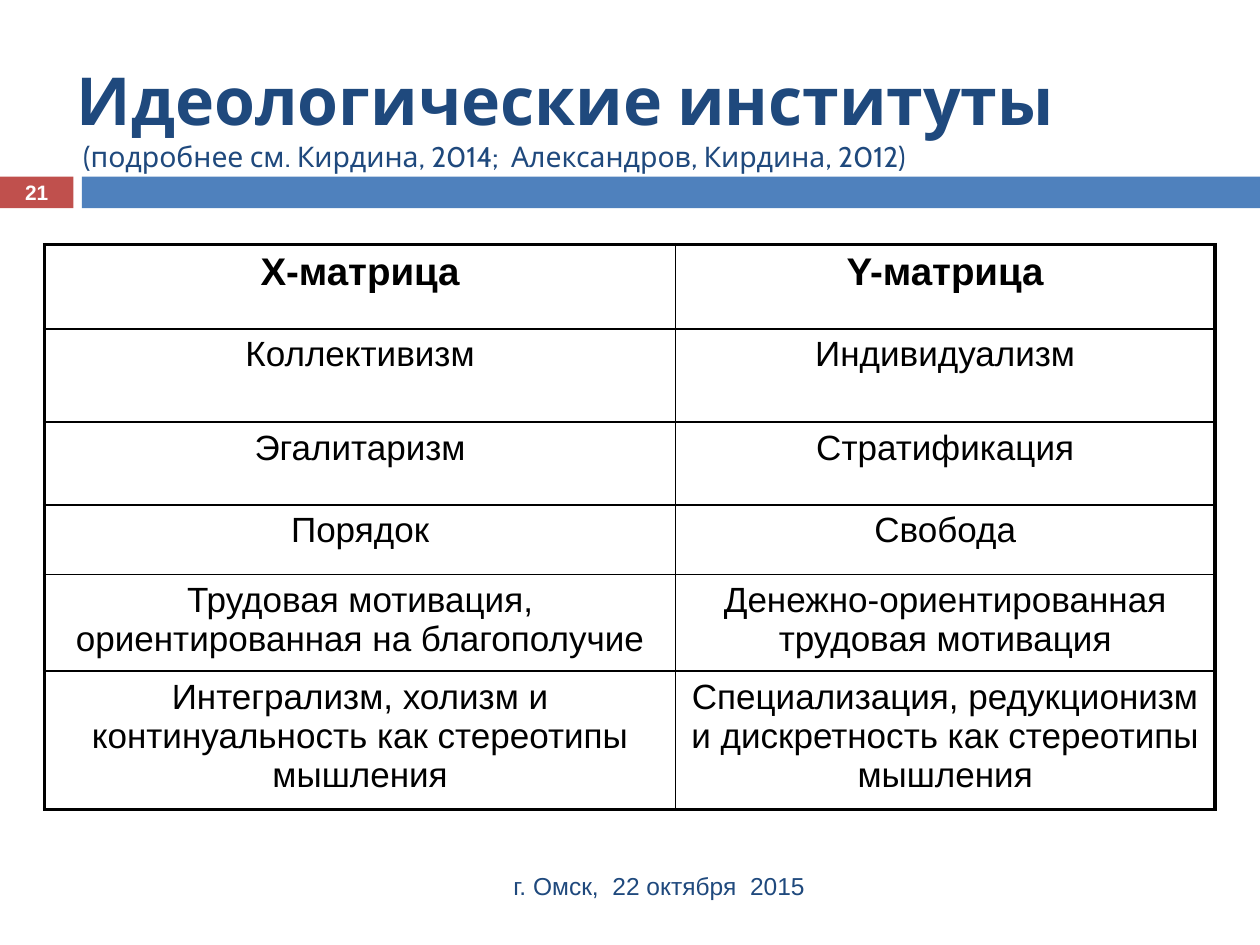
from dataclasses import dataclass

from pptx import Presentation
from pptx.dml.color import RGBColor
from pptx.enum import shapes, text
from pptx.oxml import ns, xmlchemy
from pptx.util import Cm, Pt


@dataclass(frozen=True)
class Theme:
    navy: RGBColor = RGBColor(0x1F, 0x49, 0x7D)
    blue: RGBColor = RGBColor(0x4F, 0x81, 0xBD)
    red: RGBColor = RGBColor(0xC0, 0x50, 0x4D)
    black: RGBColor = RGBColor(0, 0, 0)
    white: RGBColor = RGBColor(0xFF, 0xFF, 0xFF)
    heading_font: str = "Cabin"
    body_font: str = "Arial"
    title: float = 37.8
    subtitle: float = 16.2
    table_head: float = 22
    table_body: float = 20
    footer: float = 14
    number: float = 11.9
    outer_line: float = 2.25
    inner_line: float = 1


THEME = Theme()

MATRICES = [
    ("Х-матрица", "Y-матрица"),
    ("Коллективизм", "Индивидуализм"),
    ("Эгалитаризм", "Стратификация"),
    ("Порядок", "Свобода"),
    ("Трудовая мотивация, ориентированная на благополучие",
     "Денежно-ориентированная трудовая мотивация"),
    ("Интегрализм, холизм и континуальность как стереотипы мышления",
     "Специализация, редукционизм и дискретность как стереотипы мышления"),
]
COLUMN_WIDTHS = (12.72, 10.87)
ROW_HEIGHTS = (1.7, 1.88, 1.67, 1.4, 1.4, 1.4)


def set_font(font, size, color, bold=False, name=THEME.body_font):
    font.name, font.size, font.bold = name, Pt(size), bold
    font.color.rgb = color


def add_text_frame(slide, left, top, width, height):
    box = slide.shapes.add_textbox(Cm(left), Cm(top), Cm(width), Cm(height))
    frame = box.text_frame
    frame.word_wrap = True
    frame.vertical_anchor = text.MSO_ANCHOR.MIDDLE
    return frame


def add_title(slide, left, top, width, height):
    heading = add_text_frame(slide, left, top, width, height).paragraphs[0]
    name = heading.add_run()
    name.text = "Идеологические институты"
    set_font(name.font, THEME.title, THEME.navy, True, THEME.heading_font)
    heading.add_line_break()
    reference = heading.add_run()
    reference.text = " (подробнее см. Кирдина, 2014;  Александров, Кирдина, 2012)"
    set_font(reference.font, THEME.subtitle, THEME.navy, name=THEME.heading_font)


def add_band(slide, left, top, width, height, number_width=1.48, gap=0.17):
    # Red block for the slide number, blue bar for the rest of the width
    bar_left = number_width + gap
    for offset, part_width, color in ((0, number_width, THEME.red),
                                      (bar_left, width - bar_left, THEME.blue)):
        block = slide.shapes.add_shape(
            shapes.MSO_SHAPE.RECTANGLE,
            Cm(left + offset), Cm(top), Cm(part_width), Cm(height))
        block.shadow.inherit = False
        block.fill.solid()
        block.fill.fore_color.rgb = color
        block.line.fill.background()

    number = add_text_frame(slide, left, top, number_width, height).paragraphs[0]
    number.text = "21"
    number.alignment = text.PP_ALIGN.CENTER
    set_font(number.font, THEME.number, THEME.white, True)


def set_borders(cell, widths):
    properties = cell._tc.get_or_add_tcPr()
    for index, (side, points) in enumerate(widths.items()):
        line = xmlchemy.OxmlElement(f"a:ln{side}")
        line.set("w", str(Pt(points)))
        fill = xmlchemy.OxmlElement("a:solidFill")
        color = xmlchemy.OxmlElement("a:srgbClr")
        color.set("val", str(THEME.black))
        fill.append(color)
        line.append(fill)
        properties.insert(index, line)


def add_matrix_table(slide, left, top):
    rows, columns = len(MATRICES), len(COLUMN_WIDTHS)
    frame = slide.shapes.add_table(rows, columns, Cm(left), Cm(top),
                                   Cm(sum(COLUMN_WIDTHS)), Cm(sum(ROW_HEIGHTS)))
    table = frame.table
    table.first_row = table.horz_banding = False
    for column, width in zip(table.columns, COLUMN_WIDTHS):
        column.width = Cm(width)

    for r, (row, height) in enumerate(zip(table.rows, ROW_HEIGHTS)):
        row.height = Cm(height)
        for c, cell in enumerate(row.cells):
            cell.fill.background()
            cell.text = MATRICES[r][c]
            entry = cell.text_frame.paragraphs[0]
            entry.alignment = text.PP_ALIGN.CENTER
            is_head = r == 0
            set_font(entry.font, THEME.table_head if is_head else THEME.table_body,
                     THEME.black, is_head)
            # Heavy lines only around the outside
            outside = {"L": c == 0, "R": c == columns - 1,
                       "T": r == 0, "B": r == rows - 1}
            set_borders(cell, {side: THEME.outer_line if outer else THEME.inner_line
                               for side, outer in outside.items()})


def add_footer(slide, left, top, width, height):
    frame = add_text_frame(slide, left, top, width, height)
    frame.margin_right = Cm(0.53)
    place_date = frame.paragraphs[0]
    place_date.text = "г. Омск,  22 октября  2015"
    place_date.alignment = text.PP_ALIGN.RIGHT
    set_font(place_date.font, THEME.footer, THEME.navy)


def main():
    deck = Presentation()
    deck.slide_width, deck.slide_height = Cm(25.4), Cm(19.05)
    slide = deck.slides.add_slide(deck.slide_layouts[6])
    add_band(slide, 0, 3.56, 25.4, 0.64)
    add_title(slide, 1.3, 1.12, 23.29, 2.44)
    add_matrix_table(slide, 0.9, 4.93)
    add_footer(slide, 1.7, 17.35, 15.06, 1.02)
    deck.save("out.pptx")


if __name__ == "__main__":
    main()
